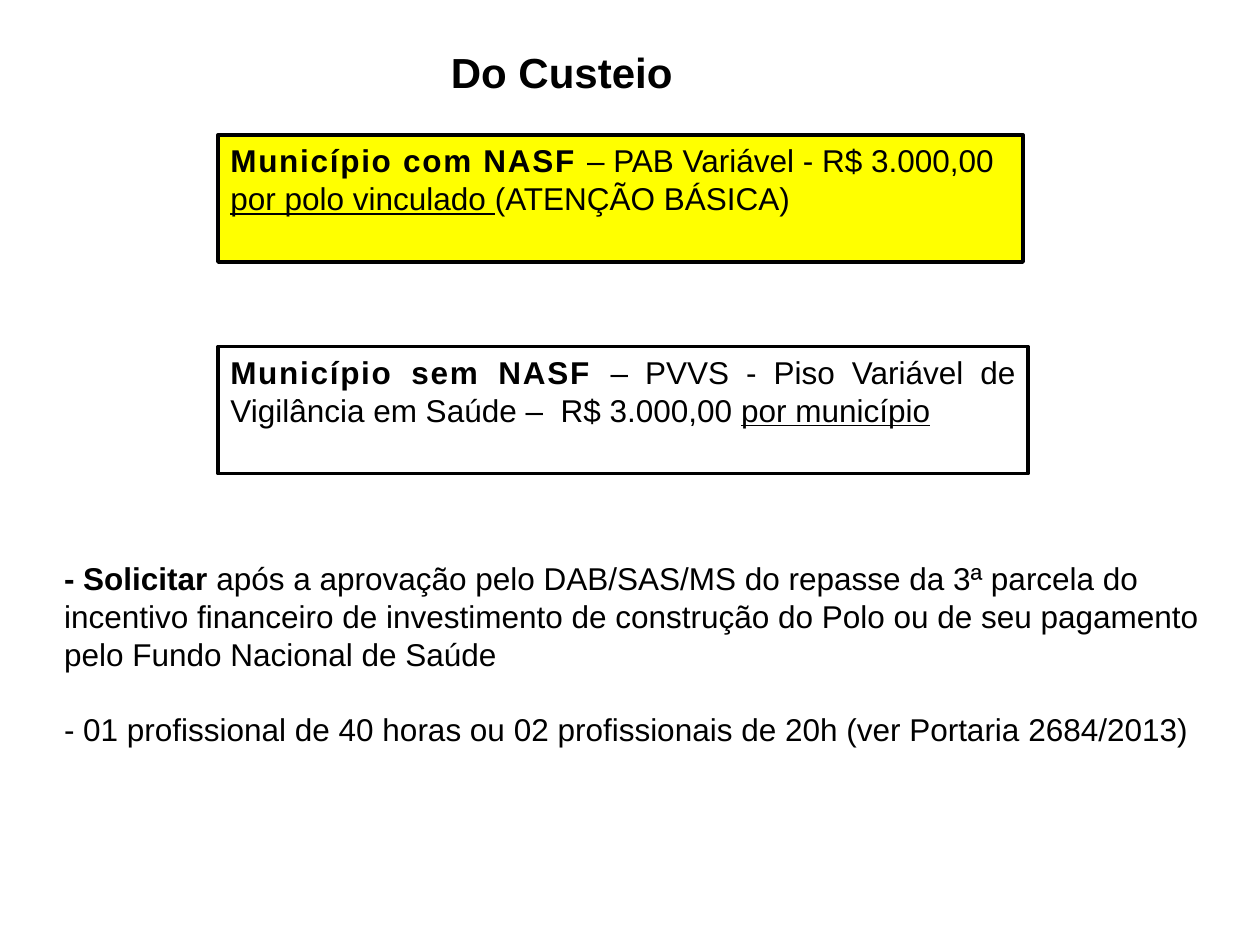
from pptx import Presentation
from pptx.dml.color import RGBColor
from pptx.enum.shapes import MSO_SHAPE
from pptx.enum.text import MSO_ANCHOR, PP_ALIGN
from pptx.util import Inches, Pt

RECTANGLE = MSO_SHAPE.RECTANGLE
TOP = MSO_ANCHOR.TOP
LEFT, JUSTIFY = PP_ALIGN.LEFT, PP_ALIGN.JUSTIFY

FONT = "Arial"
BLACK, WHITE, YELLOW = "000000", "FFFFFF", "FFFF00"

# Content: each paragraph is (alignment, runs), each run is (text, styles)
TITLE = [(LEFT, [("Do Custeio", "bold")])]
REQUEST = [
    (LEFT, [
        ("- Solicitar ", "bold"),
        ("após a aprovação pelo DAB/SAS/MS do repasse da 3ª parcela do "
         "incentivo financeiro de investimento de construção do Polo ou de "
         "seu pagamento pelo Fundo Nacional de Saúde", ""),
    ]),
    (LEFT, [("- 01 profissional de 40 horas ou 02 profissionais de 20h "
             "(ver Portaria 2684/2013)", "")]),
]
WITH_NASF = [
    (LEFT, [("Município com NASF ", "bold spaced"),
            ("– PAB Variável - R$ 3.000,00", "")]),
    (JUSTIFY, [("por polo vinculado ", "underline"),
               ("(ATENÇÃO BÁSICA)", "")]),
]
WITHOUT_NASF = [
    (JUSTIFY, [("Município sem NASF ", "bold spaced"),
               ("– PVVS - Piso Variável de Vigilância em Saúde –  R$ 3.000,00 ", ""),
               ("por município", "underline")]),
]

# Boxes: left, top, width, height, fill, outlined, gap between paragraphs, content
BOXES = [
    (0.41, 4.39, 9.22, 1.62, WHITE, False, 21, REQUEST),
    (1.73, 1.07, 6.39, 1.01, YELLOW, True, 0, WITH_NASF),
    (1.73, 2.75, 6.43, 1.01, WHITE, True, 0, WITHOUT_NASF),
]


def color(value):
    return RGBColor.from_string(value)


def write(text_frame, paragraphs, size, gap=0, wrap=True):
    text_frame.word_wrap = wrap
    text_frame.vertical_anchor = TOP
    for index, (alignment, runs) in enumerate(paragraphs):
        paragraph = text_frame.add_paragraph() if index else text_frame.paragraphs[0]
        paragraph.alignment = alignment
        if index and gap:
            paragraph.space_before = Pt(gap)
        paragraph.font.name = FONT
        paragraph.font.size = Pt(size)
        paragraph.font.color.rgb = color(BLACK)
        for text, styles in runs:
            run = paragraph.add_run()
            run.text = text
            # A shape's theme style is white, so each run states its colour
            run.font.color.rgb = color(BLACK)
            if "bold" in styles:
                run.font.bold = True
            if "underline" in styles:
                run.font.underline = True
            if "spaced" in styles:
                run.font._element.set("spc", "100")


def add_box(slide, left, top, width, height, fill, outlined, gap, paragraphs):
    box = slide.shapes.add_shape(
        RECTANGLE, Inches(left), Inches(top), Inches(width), Inches(height))
    box.shadow.inherit = False
    box.fill.solid()
    box.fill.fore_color.rgb = color(fill)
    if outlined:
        box.line.color.rgb = color(BLACK)
        box.line.width = Pt(2)
    else:
        box.line.fill.background()
    write(box.text_frame, paragraphs, 18, gap)


presentation = Presentation()
presentation.slide_width = Inches(10)
presentation.slide_height = Inches(7.5)
slide = presentation.slides.add_slide(presentation.slide_layouts[6])

# Title
title = slide.shapes.add_textbox(Inches(3.48), Inches(0.32), Inches(1.98), Inches(0.5))
write(title.text_frame, TITLE, 24, wrap=False)

# Text boxes
for box in BOXES:
    add_box(slide, *box)

presentation.save("out.pptx")
